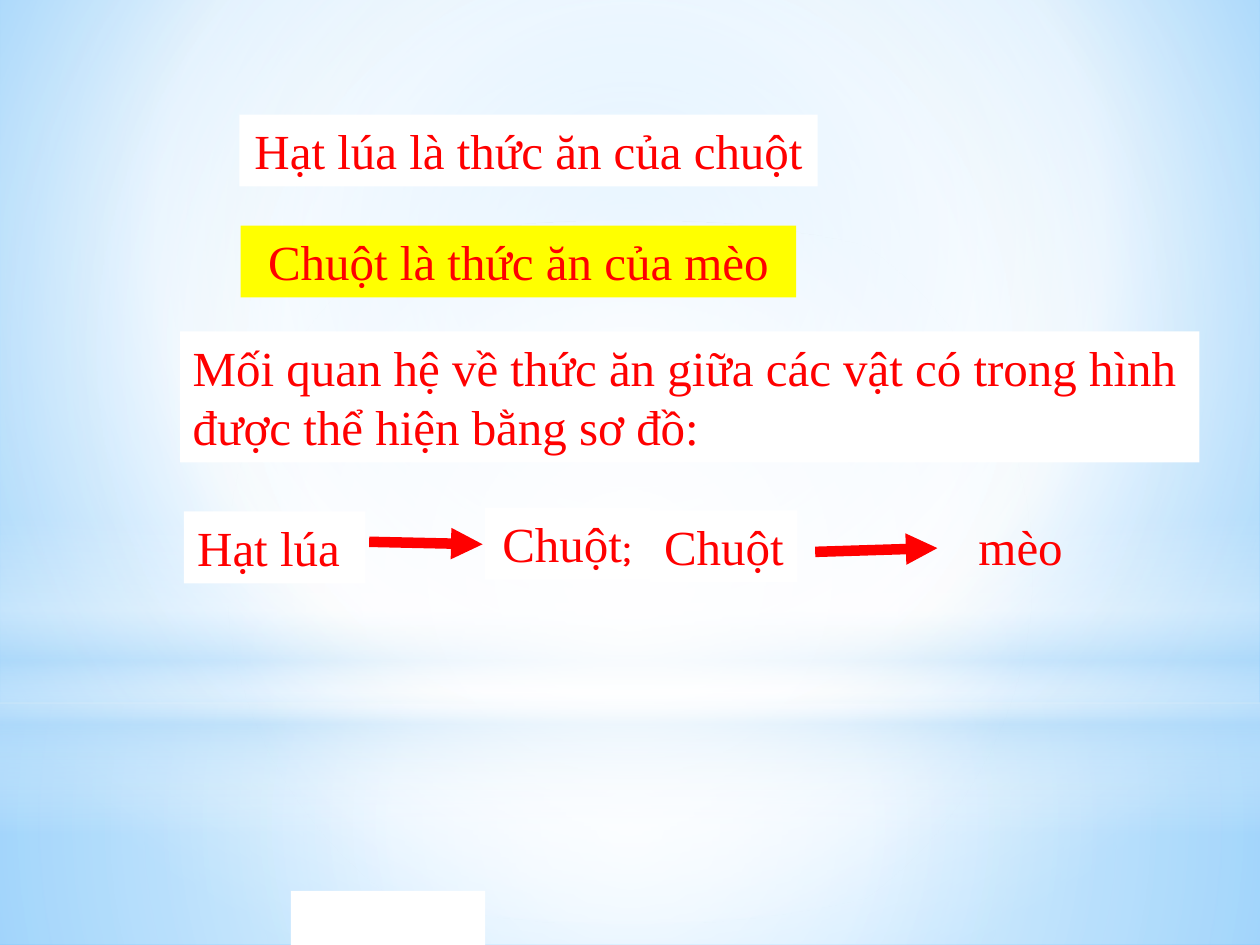
from dataclasses import dataclass
from typing import Optional

from lxml.etree import SubElement as Sub
from pptx import Presentation
from pptx.dml.color import RGBColor
from pptx.enum.shapes import MSO_CONNECTOR as Link, MSO_SHAPE as Kind
from pptx.enum.text import MSO_ANCHOR as Anchor, MSO_AUTO_SIZE as Fit, PP_ALIGN as Align
from pptx.oxml.ns import qn
from pptx.util import Inches, Pt

RED = RGBColor(0xFF, 0x00, 0x00)
WHITE = RGBColor(0xFF, 0xFF, 0xFF)
YELLOW = RGBColor(0xFF, 0xFF, 0x00)
SKY = RGBColor(0xB4, 0xDC, 0xFA)
PALE = RGBColor(0x9E, 0xD5, 0xFF)
BLUE = RGBColor(0x5B, 0xB9, 0xFF)
FONT = "Times New Roman"
COLS, ROWS = 100, 75
WIDE, HIGH = Inches(10), Inches(7.5)
MID = (50, 50, 50, 50)


@dataclass
class Area:
    """A place on the grid, in columns and rows."""
    col: float
    row: float
    cols: float
    rows: float


@dataclass
class Glow:
    """Stops are (position, colour, opacity); without a focus it runs downwards."""
    area: Area
    stops: list
    focus: Optional[tuple] = MID
    kind: Kind = Kind.RECTANGLE


@dataclass
class Label:
    area: Area
    lines: list
    fill: Optional[RGBColor] = WHITE
    align: Align = Align.CENTER
    wrap: bool = True
    tail: str = ""


@dataclass
class Arrow:
    start: tuple
    end: tuple


GLOWS = [
    Glow(Area(0, 55.8, COLS, 19.2), [(0, WHITE, 91), (37, WHITE, 76), (100, SKY, 79)]),
    Glow(Area(0, 0, COLS, 55.8), [(0, WHITE, 89), (48, WHITE, 62), (100, SKY, 79)]),
    Glow(Area(0, 41.2, COLS, 25),
         [(0, WHITE, 0), (29, WHITE, 30), (45, SKY, 40),
          (55, WHITE, 26), (65, SKY, 60), (100, WHITE, 0)], None),
    Glow(Area(0, 17.5, COLS, 55.8), [(0, WHITE, 100), (56, WHITE, 0)], kind=Kind.OVAL),
]
LABELS = [
    Label(Area(14.6, 40.6, 14.4, 5.7), ["Hạt lúa "], wrap=False),
    Label(Area(14.3, 26.3, 80.9, 10.4),
          ["Mối quan hệ về thức ăn giữa các vật có trong hình",
           "được thể hiện bằng sơ đồ:"], align=Align.LEFT, wrap=False),
    Label(Area(19, 9.1, 45.9, 5.7), ["Hạt lúa là thức ăn của chuột"], wrap=False),
    Label(Area(23.1, 70.7, 15.4, 4.3), []),
    Label(Area(38.5, 40.3, 13.1, 5.7), ["Chuột"], tail=";"),
    Label(Area(19.1, 17.9, 44.1, 5.7), ["Chuột là thức ăn của mèo"], YELLOW),
    Label(Area(51.6, 40.5, 11.7, 5.7), ["Chuột"]),
    Label(Area(74.1, 40.5, 13.8, 5.7), ["mèo"], None),
]
ARROWS = [Arrow((64.7, 43.8), (74.4, 43.5)), Arrow((29.3, 43), (38.3, 43.2))]


def point(col: float, row: float) -> tuple:
    return round(WIDE * col / COLS), round(HIGH * row / ROWS)


def place(area: Area) -> tuple:
    return point(area.col, area.row) + point(area.cols, area.rows)


def blend(node, stops: list, focus: Optional[tuple]) -> None:
    """Turn the solid fill inside node into a gradient."""
    old = node.find(".//" + qn("a:solidFill"))
    grad = Sub(old.getparent(), qn("a:gradFill"), rotWithShape="1")
    old.getparent().replace(old, grad)
    group = Sub(grad, qn("a:gsLst"))
    for pos, color, alpha in stops:
        stop = Sub(group, qn("a:gs"), pos=str(pos * 1000))
        tint = Sub(stop, qn("a:srgbClr"), val=str(color))
        if alpha < 100:
            Sub(tint, qn("a:alpha"), val=str(alpha * 1000))
    if focus:
        way = Sub(grad, qn("a:path"), path="circle")
        Sub(way, qn("a:fillToRect"),
            **{side: str(part * 1000) for side, part in zip("ltrb", focus)})
    else:
        Sub(grad, qn("a:lin"), ang=str(90 * 60000), scaled="0")


def add_box(slide, area: Area, fill: RGBColor, kind: Kind = Kind.RECTANGLE):
    box = slide.shapes.add_shape(kind, *place(area))
    box.shadow.inherit = False
    box.line.fill.background()
    box.fill.solid()
    box.fill.fore_color.rgb = fill
    return box


def write(para, text: str, font: str = FONT, size: float = 28,
          color: RGBColor = RED) -> None:
    run = para.add_run()
    run.text = text
    run.font.name, run.font.size = font, Pt(size)
    run.font.color.rgb = color


def add_label(slide, label: Label) -> None:
    if label.fill is None:
        box = slide.shapes.add_textbox(*place(label.area))
    else:
        box = add_box(slide, label.area, label.fill)
    if not label.lines:
        return
    frame = box.text_frame
    frame.word_wrap = label.wrap
    frame.auto_size = Fit.SHAPE_TO_FIT_TEXT
    frame.vertical_anchor = Anchor.TOP
    for i, line in enumerate(label.lines):
        para = frame.add_paragraph() if i else frame.paragraphs[0]
        para.alignment = label.align
        write(para, line)
    if label.tail:
        write(para, label.tail, font="Karla", size=24)


def add_arrow(slide, arrow: Arrow) -> None:
    link = slide.shapes.add_connector(Link.STRAIGHT, *point(*arrow.start),
                                      *point(*arrow.end))
    link.line.color.rgb = RED
    link.line.width = Pt(6)
    props = link._element.spPr
    Sub(props.find(qn("a:ln")), qn("a:tailEnd"), type="triangle")
    Sub(props, qn("a:effectLst"))


def main() -> None:
    deck = Presentation()
    deck.slide_width, deck.slide_height = WIDE, HIGH
    slide = deck.slides.add_slide(deck.slide_layouts[6])
    slide.background.fill.solid()
    blend(slide._element.find(".//" + qn("p:bgPr")),
          [(0, PALE, 100), (60, WHITE, 100), (100, BLUE, 100)], (20, 10, 20, 60))
    for glow in GLOWS:
        box = add_box(slide, glow.area, WHITE, glow.kind)
        blend(box._element.spPr, glow.stops, glow.focus)
    for arrow in ARROWS:
        add_arrow(slide, arrow)
    for label in LABELS:
        add_label(slide, label)
    deck.save("out.pptx")


if __name__ == "__main__":
    main()
